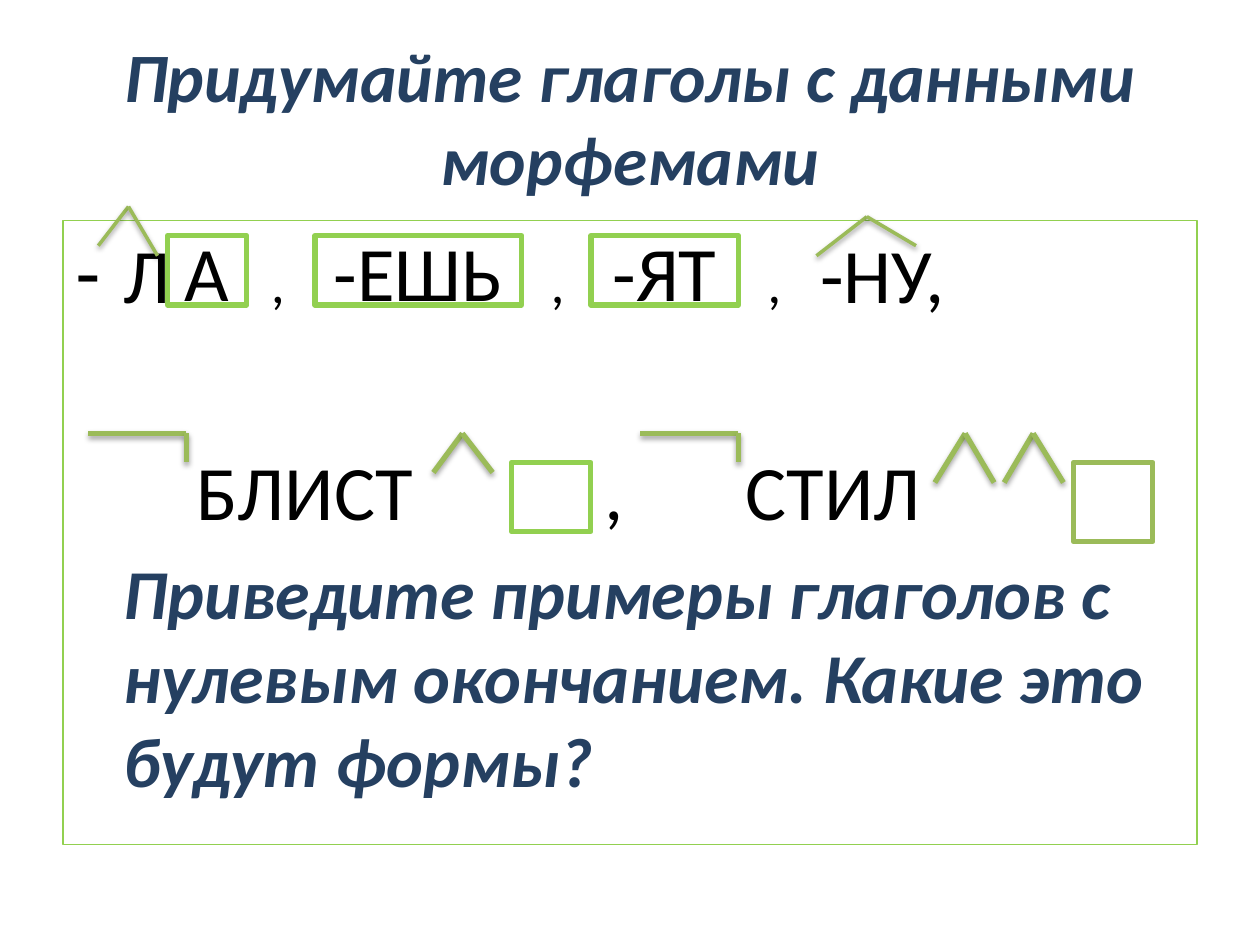
from itertools import pairwise

from lxml import etree
from pptx import Presentation, util as u
from pptx.dml.color import RGBColor
from pptx.enum import shapes, text
from pptx.oxml.ns import qn

NAVY = RGBColor(0x25, 0x40, 0x61)
LIME = RGBColor(0x92, 0xD0, 0x50)
OLIVE = RGBColor(0x9B, 0xBB, 0x59)
BLACK = RGBColor(0, 0, 0)
WHITE = RGBColor(255, 255, 255)

TITLE = "Придумайте глаголы с данными морфемами"
PLAIN = {"size": 44, "color": BLACK}
SMALL = {"size": 32, "color": BLACK}
TASK = {"size": 40, "color": NAVY, "bold": True, "italic": True}
HEADING = {**TASK, "size": 39.6}

# space before, left margin, first-line indent, bullet, tab stops, runs
ROWS = [
    (0, 0.38, -0.38, "-", (1.55, 3.77, 5.49, 5.91),
     [("Л", PLAIN), ("\t,\t,\t,\t", SMALL), ("-НУ,", PLAIN)]),
    # A blank bullet keeps the tab stops of this row active
    (71, 0.38, -0.38, " ", (0.96, 4.2, 5.32), [("\tБЛИСТ\t,\tСТИЛ", PLAIN)]),
    (8, 0.38, 0, None, (),
     [("Приведите примеры глаголов с нулевым окончанием. "
       "Какие это будут формы?", TASK)]),
]

# left, top, width, height, line colour, ending
ENDINGS = [
    (1.33, 1.87, 0.63, 0.55, LIME, "А"),
    (2.5, 1.87, 1.64, 0.55, LIME, "-ЕШЬ"),
    (4.69, 1.87, 1.17, 0.55, LIME, "-ЯТ"),
    (4.06, 3.67, 0.63, 0.55, LIME, ""),
    (8.52, 3.67, 0.63, 0.63, OLIVE, ""),
]

# line width, corner points of each suffix or prefix mark
MARKS = [
    (2, [(0.78, 1.95), (1.02, 1.64), (1.25, 2.03)]),
    (2, [(6.48, 2.03), (6.88, 1.72), (7.27, 1.95)]),
    (3, [(0.7, 3.44), (1.48, 3.44), (1.48, 3.67)]),
    (3, [(3.44, 3.75), (3.67, 3.44), (3.91, 3.75)]),
    (3, [(5.08, 3.44), (5.86, 3.44), (5.86, 3.67)]),
    (3, [(7.42, 3.83), (7.66, 3.44), (7.89, 3.83)]),
    (3, [(7.97, 3.83), (8.2, 3.44), (8.44, 3.83)]),
]


def box(*lengths):
    """Turn inch numbers into lengths."""
    return [u.Inches(v) for v in lengths]


def sub(parent, tag, **attrs):
    """Add an XML child with the given attributes."""
    return etree.SubElement(parent, qn(tag), {k: str(v) for k, v in attrs.items()})


def add_run(p, words, fmt):
    """Add a formatted run to a paragraph."""
    r = p.add_run()
    r.text = words
    r.font.name = "Calibri"
    for name, value in fmt.items():
        if name == "color":
            r.font.color.rgb = value
        else:
            setattr(r.font, name, u.Pt(value) if name == "size" else value)


def place(sp, *lengths):
    """Move and size a placeholder."""
    sp.left, sp.top, sp.width, sp.height = box(*lengths)


def add_row(p, before, margin, indent, bullet, tabs, runs):
    """Fill a body paragraph with its indents, bullet, tabs and runs."""
    p.space_before = u.Pt(before)
    pPr = p._p.get_or_add_pPr()
    pPr.set("marL", str(u.Inches(margin)))
    pPr.set("indent", str(u.Inches(indent)))
    if bullet:
        sub(pPr, "a:buChar", char=bullet)
    else:
        sub(pPr, "a:buNone")
    if tabs:
        tab_list = sub(pPr, "a:tabLst")
        for stop in tabs:
            sub(tab_list, "a:tab", pos=u.Inches(stop), algn="l")
    for words, fmt in runs:
        add_run(p, words, fmt)


def add_ending(s, left, top, width, height, color, ending):
    """Draw the frame that marks an ending."""
    sp = s.shapes.add_shape(shapes.MSO_SHAPE.RECTANGLE,
                            *box(left, top, width, height))
    sp.shadow.inherit = False
    sp.fill.solid()
    sp.fill.fore_color.rgb = WHITE
    sp.line.color.rgb = color
    sp.line.width = u.Pt(3)
    if ending:
        tf = sp.text_frame
        tf.vertical_anchor = text.MSO_ANCHOR.MIDDLE
        p = tf.paragraphs[0]
        p.alignment = text.PP_ALIGN.CENTER
        add_run(p, ending, PLAIN)


def add_mark(s, width, points):
    """Draw a morpheme mark as shadowed lines through its points."""
    for start, end in pairwise(points):
        line = s.shapes.add_connector(shapes.MSO_CONNECTOR.STRAIGHT,
                                      *box(*start, *end))
        line.line.color.rgb = OLIVE
        line.line.width = u.Pt(width)
        effects = sub(line._element.spPr, "a:effectLst")
        shadow = sub(effects, "a:outerShdw", blurRad=u.Pt(3.1), dist=u.Pt(1.7),
                     dir=5400000, rotWithShape=0)
        sub(sub(shadow, "a:srgbClr", val="000000"), "a:alpha", val=36000)


prs = Presentation()
prs.slide_width, prs.slide_height = box(10, 7.5)
s = prs.slides.add_slide(prs.slide_layouts[1])

title, body = s.shapes.title, s.placeholders[1]
place(title, 0.5, 0.3, 9, 1.25)
title.text_frame.vertical_anchor = text.MSO_ANCHOR.MIDDLE
p = title.text_frame.paragraphs[0]
p.alignment = text.PP_ALIGN.CENTER
add_run(p, TITLE, HEADING)

place(body, 0.5, 1.75, 9, 4.95)
body.line.color.rgb = LIME
body.line.width = u.Pt(0.75)
tf = body.text_frame
tf.auto_size = text.MSO_AUTO_SIZE.NONE
for i, row in enumerate(ROWS):
    add_row(tf.add_paragraph() if i else tf.paragraphs[0], *row)

for width, points in MARKS:
    add_mark(s, width, points)
for ending in ENDINGS:
    add_ending(s, *ending)

prs.save("out.pptx")
